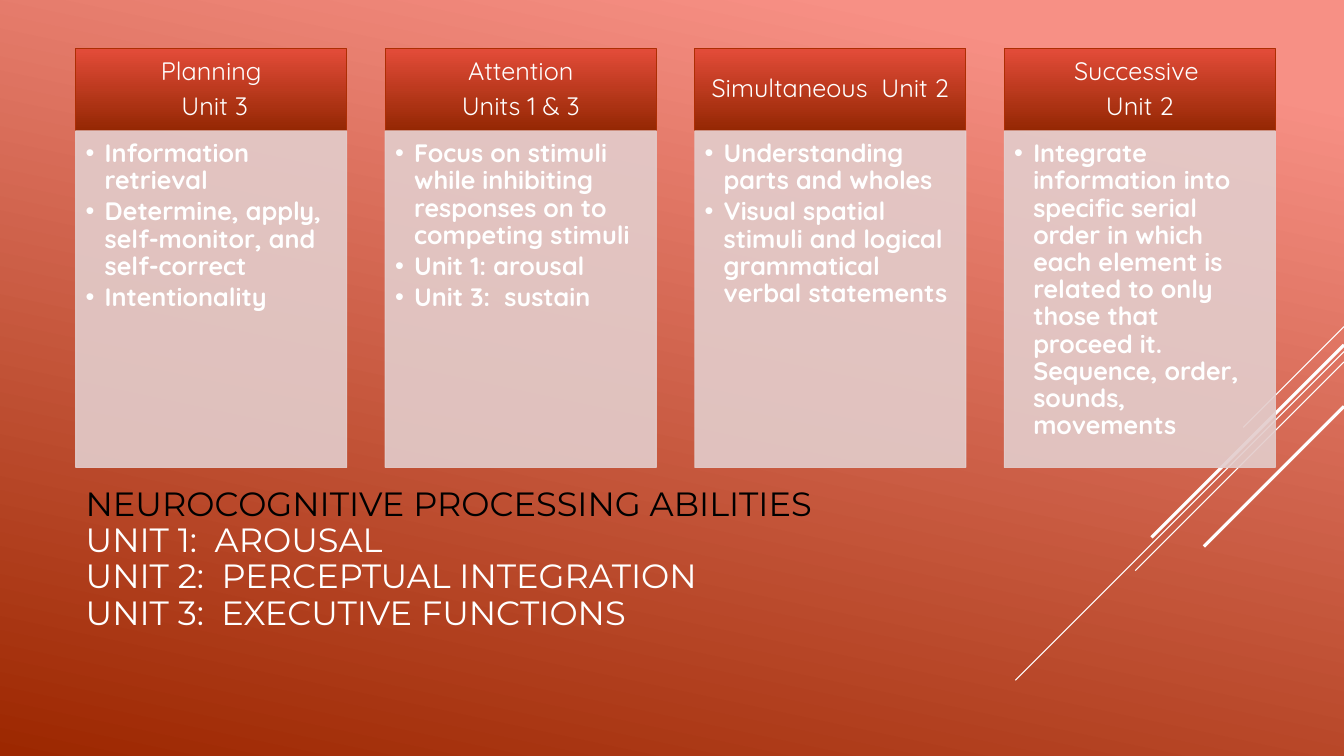
from dataclasses import dataclass

from lxml import etree
from pptx import Presentation, util as u
from pptx.dml.color import RGBColor
from pptx.enum import shapes, text
from pptx.oxml.ns import qn


@dataclass(frozen=True)
class Theme:
    white: str = "FFFFFF"
    black: str = "000000"
    background: tuple = ((0.1, "F79085"), (1, "9C2700"))
    header: tuple = ((0, "E34C39"), (1, "942703"))
    header_line: str = "AD2E03"
    body: str = "E3CDCC"
    body_opacity: int = 90
    title_font: str = "Montserrat"
    text_font: str = "Quicksand"
    title_size: int = 24
    text_size: int = 18
    thin: float = 0.75
    thick: float = 2.25


@dataclass(frozen=True)
class Ability:
    heading: list[str]
    points: list[str]


@dataclass(frozen=True)
class Ray:
    """Diagonal from the right edge, falling to the left at 45 degrees."""
    top: float
    reach: float
    weight: float


@dataclass(frozen=True)
class TextStyle:
    font: dict
    color: str
    paragraph: dict
    bullet_indent: float = 0


THEME = Theme()
SLIDE_WIDTH, SLIDE_HEIGHT = 33.87, 19.05
LEFT, COLUMN_WIDTH, COLUMN_PITCH = 1.91, 6.83, 7.8
HEADER_TOP, HEADER_HEIGHT, BODY_HEIGHT = 1.22, 2.08, 8.48

TITLE = ["NEUROCOGNITIVE PROCESSING ABILITIES", "UNIT 1:  AROUSAL",
         "UNIT 2:  PERCEPTUAL INTEGRATION", "UNIT 3:  EXECUTIVE FUNCTIONS"]
ABILITIES = [
    Ability(["Planning", " Unit 3"],
            ["Information retrieval",
             "Determine, apply, self-monitor, and self-correct",
             "Intentionality"]),
    Ability(["Attention", "Units 1 & 3"],
            ["Focus on stimuli while inhibiting responses on to competing stimuli",
             "Unit 1: arousal", "Unit 3:  sustain"]),
    Ability(["Simultaneous  Unit 2"],
            ["Understanding parts and wholes",
             "Visual spatial stimuli and logical grammatical verbal statements"]),
    Ability(["Successive ", "Unit 2"],
            ["Integrate information into specific serial order in which each "
             "element is related to only those that proceed it. "
             "Sequence, order, sounds, movements"]),
]
RAYS = [Ray(8.23, 2.54, THEME.thin), Ray(8.86, 8.28, THEME.thin),
        Ray(9.12, 5.26, THEME.thin), Ray(8.69, 4.85, THEME.thick),
        Ray(10.24, 3.53, THEME.thick)]

TITLE_STYLE = TextStyle(
    {"name": THEME.title_font, "size": u.Pt(THEME.title_size)}, THEME.white,
    {"line_spacing": 0.9, "alignment": text.PP_ALIGN.LEFT})
HEADER_STYLE = TextStyle(
    {"name": THEME.text_font, "size": u.Pt(THEME.text_size)}, THEME.white,
    {"line_spacing": 0.9, "space_after": u.Pt(6), "alignment": text.PP_ALIGN.CENTER})
BODY_STYLE = TextStyle(
    {"name": THEME.text_font, "size": u.Pt(THEME.text_size), "bold": True}, THEME.white,
    {"line_spacing": 0.9, "space_after": u.Pt(2.7), "alignment": text.PP_ALIGN.LEFT},
    bullet_indent=0.48)


def apply(target, values: dict) -> None:
    for name, value in values.items():
        setattr(target, name, value)


def set_gradient(fill, stops: tuple, angle: float) -> None:
    """Angle runs counter-clockwise in degrees."""
    fill.gradient()
    fill.gradient_angle = angle
    for stop, (position, color) in zip(fill.gradient_stops, stops):
        stop.position = position
        stop.color.rgb = RGBColor.from_string(color)


def set_opacity(shape, percent: int) -> None:
    for color in shape._element.iter(qn("a:srgbClr")):
        etree.SubElement(color, qn("a:alpha"), val=str(percent * 1000))


def add_bullet(paragraph, indent: float) -> None:
    properties = paragraph._p.get_or_add_pPr()
    properties.set("marL", str(u.Cm(indent)))
    properties.set("indent", str(-u.Cm(indent)))
    etree.SubElement(properties, qn("a:buFont"), typeface="Arial")
    etree.SubElement(properties, qn("a:buChar"), char="•")


def write_text(shape, lines: list[str], style: TextStyle,
               insets: tuple, anchor: text.MSO_ANCHOR) -> None:
    """Insets are left, top, right and bottom in centimetres."""
    frame = shape.text_frame
    sides = ("margin_left", "margin_top", "margin_right", "margin_bottom")
    apply(frame, {"word_wrap": True, "vertical_anchor": anchor,
                  **{side: u.Cm(inset) for side, inset in zip(sides, insets)}})
    for index, line in enumerate(lines):
        paragraph = frame.add_paragraph() if index else frame.paragraphs[0]
        apply(paragraph, style.paragraph)
        if style.bullet_indent:
            add_bullet(paragraph, style.bullet_indent)
        run = paragraph.add_run()
        run.text = line
        apply(run.font, style.font)
        run.font.color.rgb = RGBColor.from_string(style.color)


def add_box(slide, left: float, top: float, height: float, line_color: str):
    box = slide.shapes.add_shape(shapes.MSO_SHAPE.RECTANGLE, u.Cm(left), u.Cm(top),
                                 u.Cm(COLUMN_WIDTH), u.Cm(height))
    box.shadow.inherit = False
    box.line.width = u.Pt(THEME.thin)
    box.line.color.rgb = RGBColor.from_string(line_color)
    return box


def add_ability(slide, ability: Ability, left: float) -> None:
    header = add_box(slide, left, HEADER_TOP, HEADER_HEIGHT, THEME.header_line)
    set_gradient(header.fill, THEME.header, 270)
    write_text(header, ability.heading, HEADER_STYLE, (0.36, 0.2, 0.36, 0.2),
               text.MSO_ANCHOR.MIDDLE)

    body = add_box(slide, left, HEADER_TOP + HEADER_HEIGHT, BODY_HEIGHT, THEME.body)
    body.fill.solid()
    body.fill.fore_color.rgb = RGBColor.from_string(THEME.body)
    set_opacity(body, THEME.body_opacity)
    write_text(body, ability.points, BODY_STYLE, (0.25, 0.25, 0.36, 0.41),
               text.MSO_ANCHOR.TOP)


def add_ray(slide, ray: Ray) -> None:
    line = slide.shapes.add_connector(
        shapes.MSO_CONNECTOR.STRAIGHT, u.Cm(SLIDE_WIDTH), u.Cm(ray.top),
        u.Cm(SLIDE_WIDTH - ray.reach), u.Cm(ray.top + ray.reach))
    line.line.width = u.Pt(ray.weight)
    line.line.color.rgb = RGBColor.from_string(THEME.white)
    etree.SubElement(line._element.spPr, qn("a:effectLst"))


def add_title(slide) -> None:
    title = slide.shapes.add_textbox(u.Cm(LEFT), u.Cm(12.47), u.Cm(20.96), u.Cm(4.19))
    write_text(title, TITLE, TITLE_STYLE, (0.25, 0.13, 0.25, 1.04),
               text.MSO_ANCHOR.MIDDLE)
    first_run = title.text_frame.paragraphs[0].runs[0]
    first_run.font.color.rgb = RGBColor.from_string(THEME.black)


def main() -> None:
    presentation = Presentation()
    apply(presentation, {"slide_width": u.Cm(SLIDE_WIDTH),
                         "slide_height": u.Cm(SLIDE_HEIGHT)})
    slide = presentation.slides.add_slide(presentation.slide_layouts[6])
    set_gradient(slide.background.fill, THEME.background, 258)
    add_title(slide)
    for ray in RAYS:
        add_ray(slide, ray)
    for column, ability in enumerate(ABILITIES):
        add_ability(slide, ability, LEFT + column * COLUMN_PITCH)
    presentation.save("out.pptx")


if __name__ == "__main__":
    main()
